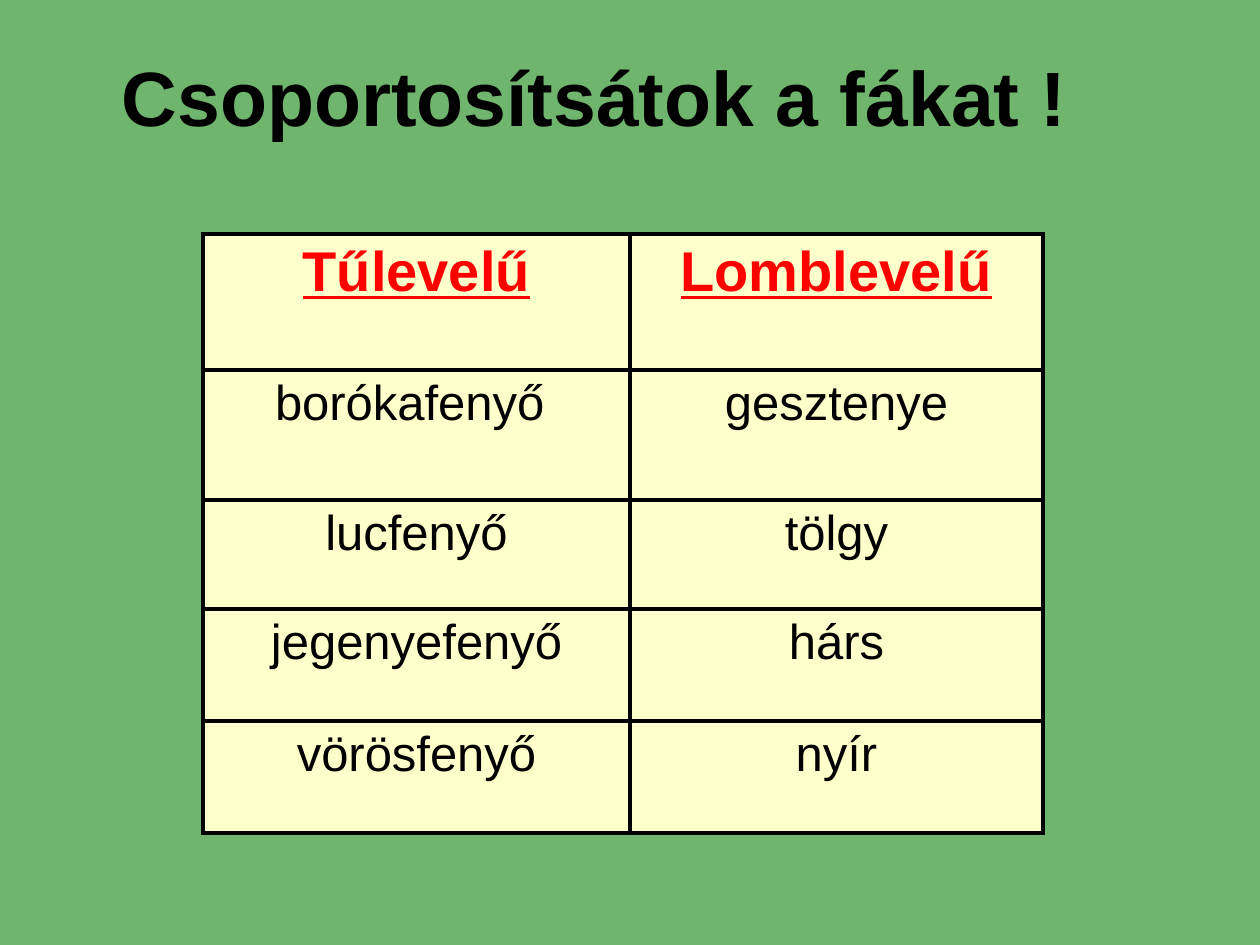
from lxml.etree import SubElement
from pptx import Presentation
from pptx.dml.color import RGBColor
from pptx.enum.text import MSO_ANCHOR, PP_ALIGN
from pptx.oxml.ns import qn
from pptx.util import Emu, Pt

ROWS = [
    ("Tűlevelű", "Lomblevelű"),
    ("borókafenyő ", "gesztenye"),
    ("lucfenyő", "tölgy"),
    ("jegenyefenyő", "hárs"),
    ("vörösfenyő", "nyír"),
]
COL_WIDTHS = (427, 413)
ROW_HEIGHTS = (136, 130, 109, 112, 112)


def px(n):
    """Turn pixels at 126 to the inch into EMU."""
    return Emu(round(n * 914400 / 126))


def color(value):
    """Turn a hex string into a colour."""
    return RGBColor.from_string(value)


def write(tf, text, size, ink="000000", bold=False, underline=False):
    """Put one centred run into a text frame."""
    p = tf.paragraphs[0]
    p.alignment = PP_ALIGN.CENTER
    r = p.add_run()
    r.text = text
    r.font.name = "Arial"
    r.font.size = Pt(size)
    r.font.bold = bold
    r.font.underline = underline
    r.font.color.rgb = color(ink)


def add_title(s, text):
    """Place and format the title placeholder."""
    sp = s.shapes.title
    sp.left, sp.top, sp.width, sp.height = map(px, (105, 35, 1111, 105))
    tf = sp.text_frame
    tf.word_wrap = True
    tf.vertical_anchor = MSO_ANCHOR.TOP
    tf.margin_left, tf.margin_right = px(0), px(131)
    tf.margin_top, tf.margin_bottom = px(15), px(0)
    write(tf, text, 44, bold=True)


def add_borders(cell, ink, width):
    """Draw a solid line on all four sides of a cell."""
    tc_pr = cell._tc.get_or_add_tcPr()
    for side in ("lnL", "lnR", "lnT", "lnB"):
        ln = SubElement(tc_pr, qn(f"a:{side}"), w=str(Pt(width)))
        fill = SubElement(ln, qn("a:solidFill"))
        SubElement(fill, qn("a:srgbClr"), val=ink)


def add_tree_table(s):
    """Add the table that sorts trees by kind of leaf."""
    table = s.shapes.add_table(
        len(ROWS), len(COL_WIDTHS), px(203), px(234),
        px(sum(COL_WIDTHS)), px(sum(ROW_HEIGHTS))).table
    table.horz_banding = False
    for column, width in zip(table.columns, COL_WIDTHS):
        column.width = px(width)
    for i, (row, height) in enumerate(zip(table.rows, ROW_HEIGHTS)):
        row.height = px(height)
        for cell, text in zip(row.cells, ROWS[i]):
            add_borders(cell, "000000", 2.25)
            cell.fill.solid()
            cell.fill.fore_color.rgb = color("FFFFCC")
            if i == 0:
                write(cell.text_frame, text, 32, "FF0000", True, True)
            else:
                write(cell.text_frame, text, 28)


def main():
    """Build the slide and save it."""
    prs = Presentation()
    prs.slide_width, prs.slide_height = px(1260), px(945)
    s = prs.slides.add_slide(prs.slide_layouts[5])
    s.background.fill.solid()
    s.background.fill.fore_color.rgb = color("6FB56D")
    add_title(s, "Csoportosítsátok a fákat !")
    add_tree_table(s)
    prs.save("out.pptx")


if __name__ == "__main__":
    main()
